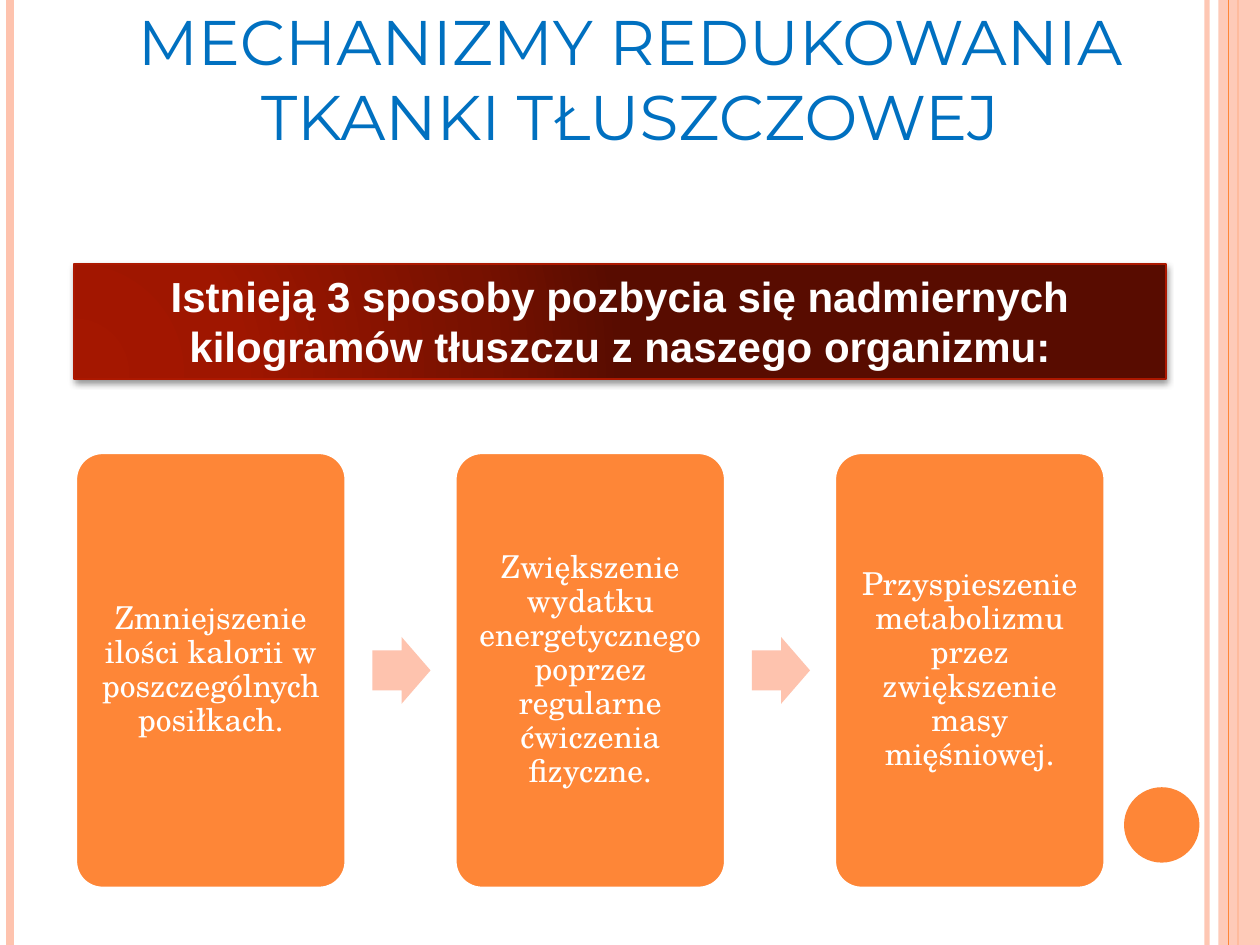
from pptx import Presentation
from pptx.dml.color import RGBColor
from pptx.enum.shapes import MSO_CONNECTOR, MSO_SHAPE as Shape
from pptx.enum.text import MSO_ANCHOR as Anchor, MSO_AUTO_SIZE as AutoSize, PP_ALIGN as Align
from pptx.oxml import parse_xml
from pptx.oxml.ns import nsdecls
from pptx.util import Cm, Pt

COLORS = {
    "title": "0070C0",
    "orange": "FE8637",
    "peach": "FEC3AE",
    "white": "FFFFFF",
    "banner_edge": "AC1800",
    "shadow": "000000",
}
BANNER_STOPS = {0: "A41700", 30: "9F1600", 75: "771100", 100: "580C00"}

TITLE = "MECHANIZMY REDUKOWANIA TKANKI TŁUSZCZOWEJ"
BANNER = "Istnieją 3 sposoby pozbycia się nadmiernych kilogramów tłuszczu z naszego organizmu:"
METHODS = [
    "Zmniejszenie ilości kalorii w poszczególnych posiłkach.",
    "Zwiększenie wydatku energetycznego poprzez regularne ćwiczenia fizyczne.",
    "Przyspieszenie metabolizmu przez zwiększenie masy mięśniowej.",
]

TITLE_FONT = {"name": "Montserrat", "size": Pt(36), "bold": False}
BANNER_FONT = {"name": "Arial", "size": Pt(24), "bold": True}
CARD_FONT = {"name": "TeX Gyre Schola", "size": Pt(18), "bold": False}


def rgb(name):
    return RGBColor.from_string(COLORS[name])


def set_alpha(element, percent):
    """Make the solid colour inside the element partly transparent."""
    for color in element.xpath(".//a:solidFill/a:srgbClr"):
        color.append(parse_xml(f'<a:alpha {nsdecls("a")} val="{percent * 1000}"/>'))


def write(shape, text, font, color, anchor, line_spacing=1.0):
    frame = shape.text_frame
    frame.text = text
    frame_format = {"word_wrap": True, "auto_size": AutoSize.NONE, "vertical_anchor": anchor}
    for key, value in frame_format.items():
        setattr(frame, key, value)
    paragraph = frame.paragraphs[0]
    paragraph.alignment = Align.CENTER
    paragraph.line_spacing = line_spacing
    run_font = paragraph.runs[0].font
    for key, value in font.items():
        setattr(run_font, key, value)
    run_font.color.rgb = rgb(color)


def add_block(slide, preset, box, fill=None, edge=None, edge_width=1):
    block = slide.shapes.add_shape(preset, *map(Cm, box))
    block.shadow.inherit = False
    if fill:
        block.fill.solid()
        block.fill.fore_color.rgb = rgb(fill)
    if edge:
        block.line.color.rgb = rgb(edge)
        block.line.width = Pt(edge_width)
    else:
        block.line.fill.background()
    return block


def add_stripe(slide, x, height, color, width):
    stripe = slide.shapes.add_connector(MSO_CONNECTOR.STRAIGHT, Cm(x), 0, Cm(x), Cm(height))
    stripe.line.color.rgb = rgb(color)
    stripe.line.width = Pt(width)
    stripe._element.spPr.append(parse_xml(f'<a:effectLst {nsdecls("a")}/>'))
    return stripe


def add_frame(slide, width, height):
    """Stripes along both slide edges and the dot at the lower right."""
    inner = add_stripe(slide, width - 1.07, height, "peach", 3)
    set_alpha(inner._element.spPr, 93)
    add_stripe(slide, 0.21, height, "peach", 4.5)
    add_stripe(slide, width - 0.44, height, "orange", 1.5)
    band = add_block(slide, Shape.RECTANGLE, (width - 0.84, 0, 0.84, height), "peach")
    set_alpha(band._element.spPr, 87)
    add_stripe(slide, width - 0.64, height, "orange", 0.75)
    add_block(slide, Shape.OVAL, (width - 2.74, height - 3.18, 1.52, 1.52), "orange")


def place_title(slide, box):
    title = slide.shapes.title
    for key, value in zip(("left", "top", "width", "height"), box):
        setattr(title, key, Cm(value))
    write(title, TITLE, TITLE_FONT, "title", Anchor.TOP)


def add_banner(slide, box):
    banner = add_block(slide, Shape.RECTANGLE, box, edge="banner_edge")
    stops = "".join(
        f'<a:gs pos="{position * 1000}"><a:srgbClr val="{color}"/></a:gs>'
        for position, color in BANNER_STOPS.items()
    )
    properties = banner._element.spPr
    properties.xpath("a:prstGeom")[0].addnext(parse_xml(
        f'<a:gradFill {nsdecls("a")}><a:gsLst>{stops}</a:gsLst><a:path path="circle">'
        '<a:fillToRect l="5000" t="100000" r="120000" b="10000"/></a:path></a:gradFill>'
    ))
    properties.xpath("a:effectLst")[0].append(parse_xml(
        f'<a:outerShdw {nsdecls("a")} blurRad="{Pt(4)}" dist="{Pt(1.6)}" dir="5400000" '
        f'rotWithShape="0"><a:srgbClr val="{COLORS["shadow"]}">'
        '<a:alpha val="42000"/></a:srgbClr></a:outerShdw>'
    ))
    write(banner, BANNER, BANNER_FONT, "white", Anchor.TOP)


def add_card(slide, box, text):
    card = add_block(slide, Shape.ROUNDED_RECTANGLE, box, "orange", "white", 2)
    card.adjustments[0] = 0.1
    for side in ("left", "top", "right", "bottom"):
        setattr(card.text_frame, f"margin_{side}", Cm(0.18))
    write(card, text, CARD_FONT, "white", Anchor.MIDDLE, 0.9)


def add_process(slide, box, card_width=5.46):
    """Equally spaced cards with an arrow in every gap."""
    left, top, width, height = box
    pitch = (width - card_width) / (len(METHODS) - 1)
    arrow_width, arrow_height = 1.17, 1.35
    for index, method in enumerate(METHODS):
        x = left + index * pitch
        if index:
            arrow_box = (x - pitch + card_width + 0.53, top + (height - arrow_height) / 2,
                         arrow_width, arrow_height)
            arrow = add_block(slide, Shape.RIGHT_ARROW, arrow_box, "peach")
            arrow.adjustments[0] = 0.6
        add_card(slide, (x, top, card_width, height), method)


def main():
    width, height = 25.4, 19.05
    deck = Presentation()
    deck.slide_width, deck.slide_height = Cm(width), Cm(height)
    slide = deck.slides.add_slide(deck.slide_layouts[5])
    add_frame(slide, width, height)
    place_title(slide, (0, -0.08, width, 8.2))
    add_banner(slide, (1.5, 5.33, 22, 2.31))
    add_process(slide, (1.52, 9.12, 20.76, 8.79))
    deck.save("out.pptx")


if __name__ == "__main__":
    main()
